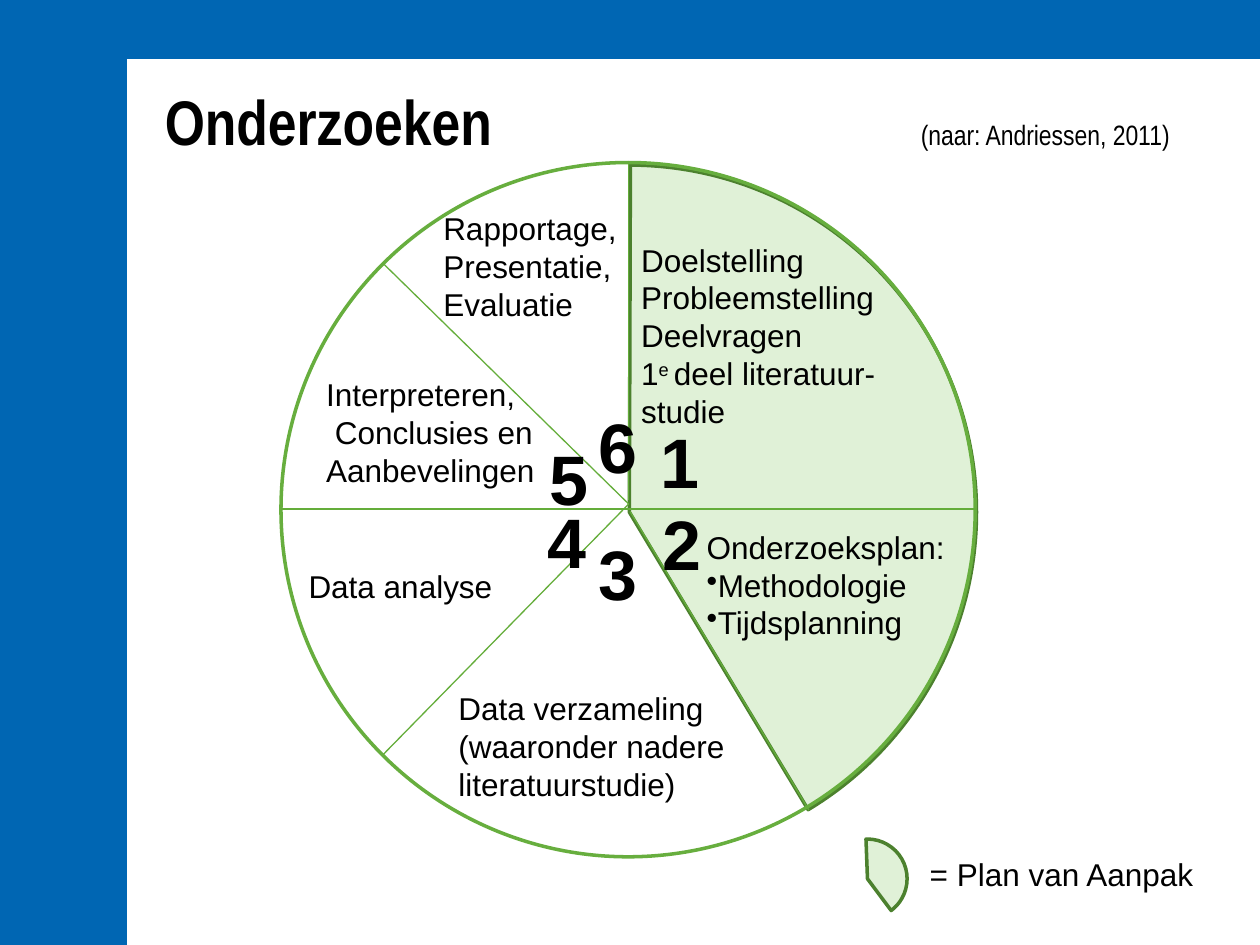
from lxml.etree import SubElement
from pptx import Presentation
from pptx.dml.color import RGBColor
from pptx.enum.shapes import MSO_CONNECTOR as Conn, MSO_SHAPE as Shape
from pptx.enum.text import PP_ALIGN as Align
from pptx.oxml.ns import qn
from pptx.util import Inches, Pt

BODY = {"name": "Arial", "size": Pt(18), "bold": False}
DIGIT = {"name": "Arial", "size": Pt(40), "bold": True}
TITLE = {"name": "Arial Narrow", "size": Pt(36), "bold": True}
CITE = {"name": "Arial Narrow", "size": Pt(16), "bold": False}
BLUE, WHITE, BLACK = "0066B3", "FFFFFF", "000000"
PALE, DARK, RING, SPOKE = "E0F1D7", "4C812E", "67AE3E", "64AD3A"


def color(code):
    return RGBColor.from_string(code)


class Deck:
    def __init__(self):
        self.prs = Presentation()
        self.prs.slide_width, self.prs.slide_height = Inches(10), Inches(7.5)
        self.slide = self.prs.slides.add_slide(self.prs.slide_layouts[6])
        back = self.slide.background.fill
        back.solid()
        back.fore_color.rgb = color(BLUE)

    def shape(self, kind, box, fill=None, line=None, angles=()):
        item = self.slide.shapes.add_shape(kind, *map(Inches, box))
        item.shadow.inherit = False
        if fill:
            item.fill.solid()
            item.fill.fore_color.rgb = color(fill)
        else:
            item.fill.background()
        if line:
            item.line.color.rgb = color(line)
            item.line.width = Pt(2)
        else:
            item.line.fill.background()
        for i, angle in enumerate(angles):
            item.adjustments[i] = angle * 0.6  # degrees to preset units

    def line(self, start, end):
        item = self.slide.shapes.add_connector(
            Conn.STRAIGHT, *map(Inches, start + end))
        item.line.color.rgb = color(SPOKE)
        item.line.width = Pt(0.75)
        SubElement(item._element.spPr, qn("a:effectLst"))

    def run(self, para, text, style):
        run = para.add_run()
        run.text = text
        run.font.color.rgb = color(BLACK)
        for key, value in style.items():
            setattr(run.font, key, value)
        return run

    def frame(self, box, wrap=True):
        frame = self.slide.shapes.add_textbox(*map(Inches, box)).text_frame
        frame.word_wrap = wrap
        return frame

    def title(self, box, head, cite, tab):
        """Put the heading and, at a tab stop, its source on one line."""
        para = self.frame(box).paragraphs[0]
        tabs = SubElement(para._p.get_or_add_pPr(), qn("a:tabLst"))
        SubElement(tabs, qn("a:tab"), pos=str(Inches(tab)), algn="l")
        self.run(para, head, TITLE)
        self.run(para, "\t" + cite, CITE)

    def text(self, box, rows, style=BODY, align=Align.LEFT, wrap=True):
        """Rows may start with • (bullet) or > (indent); |x| is superscript."""
        frame = self.frame(box, wrap)
        for i, row in enumerate(rows):
            para = frame.add_paragraph() if i else frame.paragraphs[0]
            para.alignment = align
            props = para._p.get_or_add_pPr()
            if row[0] == "•":
                SubElement(props, qn("a:buChar"), char="•")
            elif row[0] == ">":
                props.set("marL", str(Inches(0.07)))
            for j, part in enumerate(row.lstrip("•>").split("|")):
                run = self.run(para, part, style)
                if j % 2:
                    run._r.get_or_add_rPr().set("baseline", "30000")


SPOKES = [
    ((4.99, 1.29), (4.99, 3.97)),
    ((3.04, 2.09), (4.99, 4)),
    ((2.23, 4.04), (4.99, 4.04)),
    ((3.04, 5.99), (4.99, 4)),
    ((7.75, 4.04), (4.99, 4.04)),
    ((6.42, 6.43), (5, 4.06)),
]
PHASES = [
    ((4.99, 1.86, 2.19, 1.62), ["Doelstelling", "Probleemstelling",
                                "Deelvragen", "1|e |deel literatuur-studie"]),
    ((5.51, 4.14, 2.4, 1.01), ["Onderzoeksplan:", "•Methodologie",
                               "•Tijdsplanning"]),
    ((3.54, 5.42, 2.32, 1.01),
     ["Data verzameling (waaronder nadere literatuurstudie)"]),
    ((2.35, 4.45, 1.89, 0.4), ["Data analyse"]),
    ((2.49, 2.93, 2.1, 1.01), ["Interpreteren,", ">Conclusies en",
                               "Aanbevelingen"]),
    ((3.42, 1.61, 2.13, 1.01), ["Rapportage,", "Presentatie, Evaluatie"]),
]
DIGITS = [(5.14, 3.27), (5.16, 3.92), (4.65, 4.16),
          (4.25, 3.91), (4.26, 3.41), (4.65, 3.15)]


def main():
    deck = Deck()
    deck.shape(Shape.RECTANGLE, (1.01, 0.47, 8.99, 7.03), WHITE)
    deck.shape(Shape.PIE, (2.24, 1.31, 5.51, 5.51), PALE, DARK, (270.17, 59))
    deck.title((1.21, 0.61, 8.7, 0.7), "Onderzoeken",
               "(naar: Andriessen, 2011)", 6)
    deck.shape(Shape.OVAL, (2.23, 1.29, 5.51, 5.51), line=RING)
    for start, end in SPOKES:
        deck.line(start, end)
    for box, rows in PHASES:
        deck.text(box, rows)
    for num, spot in enumerate(DIGITS, 1):
        deck.text(spot + (0.39, 0.77), [str(num)], DIGIT, Align.CENTER)
    deck.shape(Shape.PIE, (6.57, 6.66, 0.63, 0.63), PALE, DARK, (267.92, 53.21))
    deck.text((7.28, 6.74, 2.31, 0.4), ["= Plan van Aanpak"], wrap=False)
    deck.prs.save("out.pptx")


if __name__ == "__main__":
    main()
